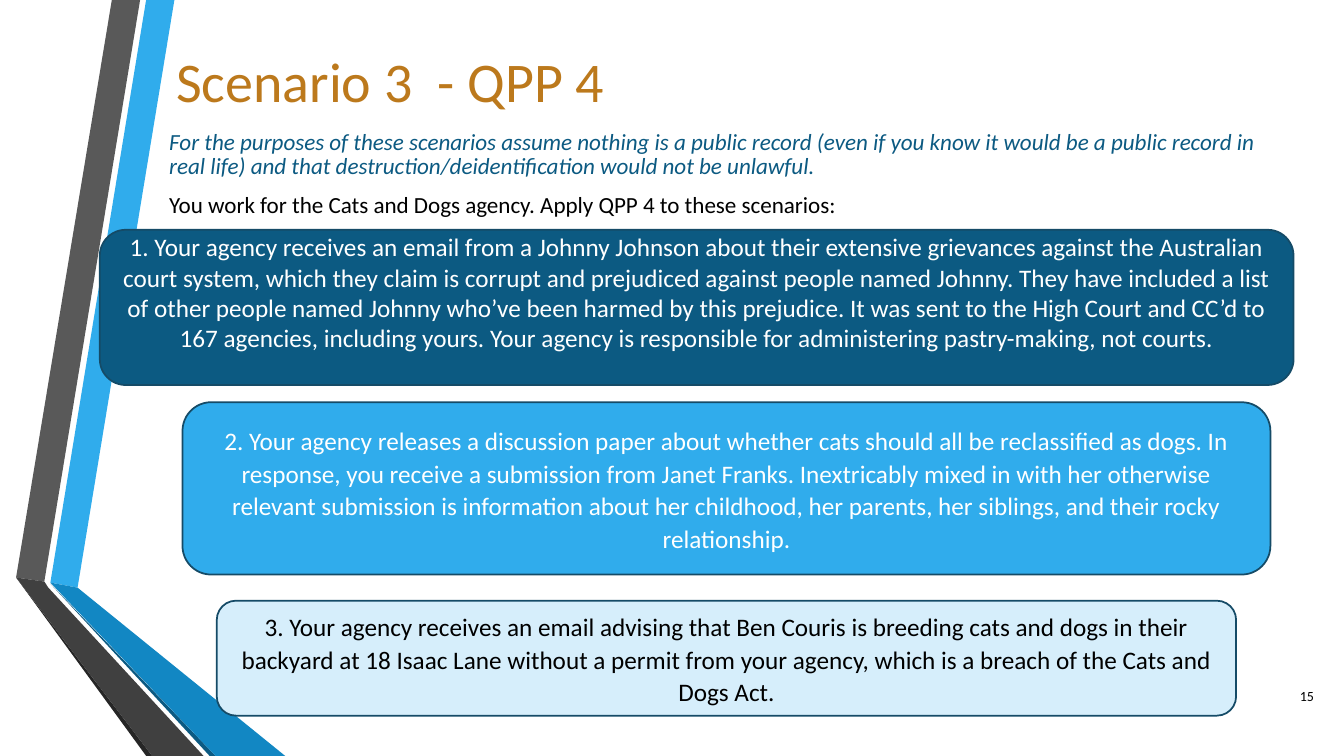
from pptx import Presentation
from pptx.dml.color import RGBColor
from pptx.enum.shapes import MSO_SHAPE
from pptx.enum.text import MSO_ANCHOR, PP_ALIGN
from pptx.util import Inches, Pt

ROUNDED = MSO_SHAPE.ROUNDED_RECTANGLE
TOP, MIDDLE = MSO_ANCHOR.TOP, MSO_ANCHOR.MIDDLE
LEFT, CENTER, RIGHT = PP_ALIGN.LEFT, PP_ALIGN.CENTER, PP_ALIGN.RIGHT

FONT = "Calibri"
COLORS = {
    "gold": "BC791C", "navy": "0C5A82", "sky": "30ACEC", "pale": "D6EEFB",
    "blue": "1287C3", "outline": "154B67", "black": "000000", "white": "FFFFFF",
    "gray": "595959", "dark gray": "404040", "charcoal": "262626",
}

# Content
TITLE = "Scenario 3  - QPP 4"
ASSUMPTION = (
    "For the purposes of these scenarios assume nothing is a public record "
    "(even if you know it would be a public record in real life) and that "
    "destruction/deidentification would not be unlawful."
)
TASK = "You work for the Cats and Dogs agency. Apply QPP 4 to these scenarios:"
PAGE_NUMBER = "15"

# Scenario cards: box, fill, text colour, line spacing, space after, bottom inset, text
SCENARIOS = [
    ((0.99, 2.28, 11.84, 1.54), "navy", "white", 1.0, 0, 0.35,
     "1. Your agency receives an email from a Johnny Johnson about their extensive "
     "grievances against the Australian court system, which they claim is corrupt and "
     "prejudiced against people named Johnny. They have included a list of other people "
     "named Johnny who’ve been harmed by this prejudice. It was sent to the High Court "
     "and CC’d to 167 agencies, including yours. Your agency is responsible for "
     "administering pastry-making, not courts."),
    ((1.81, 3.99, 10.79, 1.71), "sky", "white", 1.07, 8, 0.05,
     "2. Your agency releases a discussion paper about whether cats should all be "
     "reclassified as dogs. In response, you receive a submission from Janet Franks. "
     "Inextricably mixed in with her otherwise relevant submission is information about "
     "her childhood, her parents, her siblings, and their rocky relationship."),
    ((2.15, 5.96, 10.11, 1.14), "pale", "black", 1.07, 8, 0.05,
     "3. Your agency receives an email advising that Ben Couris is breeding cats and dogs "
     "in their backyard at 18 Isaac Lane without a permit from your agency, which is a "
     "breach of the Cats and Dogs Act."),
]

# Folded ribbons on the left edge, corners in inches
RIBBONS = [
    ("sky", [(0.5, 5.78), (0.77, 5.83), (1.73, 0), (1.45, 0)]),
    ("gray", [(1.39, 0), (1.11, 0), (0.16, 5.73), (0.44, 5.77)]),
    ("charcoal", [(0.16, 5.73), (1.45, 7.5), (1.51, 7.5)]),
    ("navy", [(0.5, 5.79), (2.08, 7.5), (2.14, 7.5)]),
    ("blue", [(0.5, 5.78), (2.14, 7.5), (2.83, 7.5), (0.77, 5.83)]),
    ("dark gray", [(2.02, 7.5), (0.48, 5.83), (0.44, 5.77), (0.16, 5.73), (1.51, 7.5)]),
]


def rgb(name):
    return RGBColor.from_string(COLORS[name])


def fill_shape(shape, color):
    shape.shadow.inherit = False
    shape.fill.solid()
    shape.fill.fore_color.rgb = rgb(color)


def set_text(shape, lines, anchor=MIDDLE):
    frame = shape.text_frame
    frame.text = "\n".join(lines)
    frame.word_wrap = True
    frame.vertical_anchor = anchor
    return frame.paragraphs


def style(paragraph, size, color, align=LEFT, spacing=1.0, after=0, italic=False):
    paragraph.alignment = align
    paragraph.line_spacing = spacing
    paragraph.space_after = Pt(after)
    for run in paragraph.runs:
        run.font.name = FONT
        run.font.size = Pt(size)
        run.font.italic = italic
        run.font.color.rgb = rgb(color)


def add_text(box, lines, anchor=MIDDLE):
    return set_text(slide.shapes.add_textbox(*map(Inches, box)), lines, anchor)


prs = Presentation()
prs.slide_width, prs.slide_height = Inches(13.33), Inches(7.5)
slide = prs.slides.add_slide(prs.slide_layouts[6])

# Ribbons
for color, corners in RIBBONS:
    start, *others = [(Inches(x), Inches(y)) for x, y in corners]
    builder = slide.shapes.build_freeform(*start)
    builder.add_line_segments(others, close=True)
    ribbon = builder.convert_to_shape()
    fill_shape(ribbon, color)
    ribbon.line.fill.background()

# Title, introduction and page number
title, = add_text((1.65, 0.35, 10.96, 0.88), [TITLE])
style(title, 40, "gold")

assumption, task = add_text((1.58, 1.25, 11.25, 0.99), [ASSUMPTION, TASK], TOP)
style(assumption, 16.5, "navy", spacing=0.87, after=8, italic=True)
style(task, 16.5, "black", spacing=0.87, after=8)
task.space_before = Pt(2.5)

page_number, = add_text((12.53, 6.7, 0.6, 0.4), [PAGE_NUMBER])
style(page_number, 10, "black", RIGHT)

# Scenario cards
for box, fill, text_color, spacing, after, bottom, text in SCENARIOS:
    card = slide.shapes.add_shape(ROUNDED, *map(Inches, box))
    fill_shape(card, fill)
    card.line.color.rgb = rgb("outline")
    card.line.width = Pt(1.25)
    scenario, = set_text(card, [text])
    card.text_frame.margin_bottom = Inches(bottom)
    style(scenario, 18, text_color, CENTER, spacing, after)

prs.save("out.pptx")
